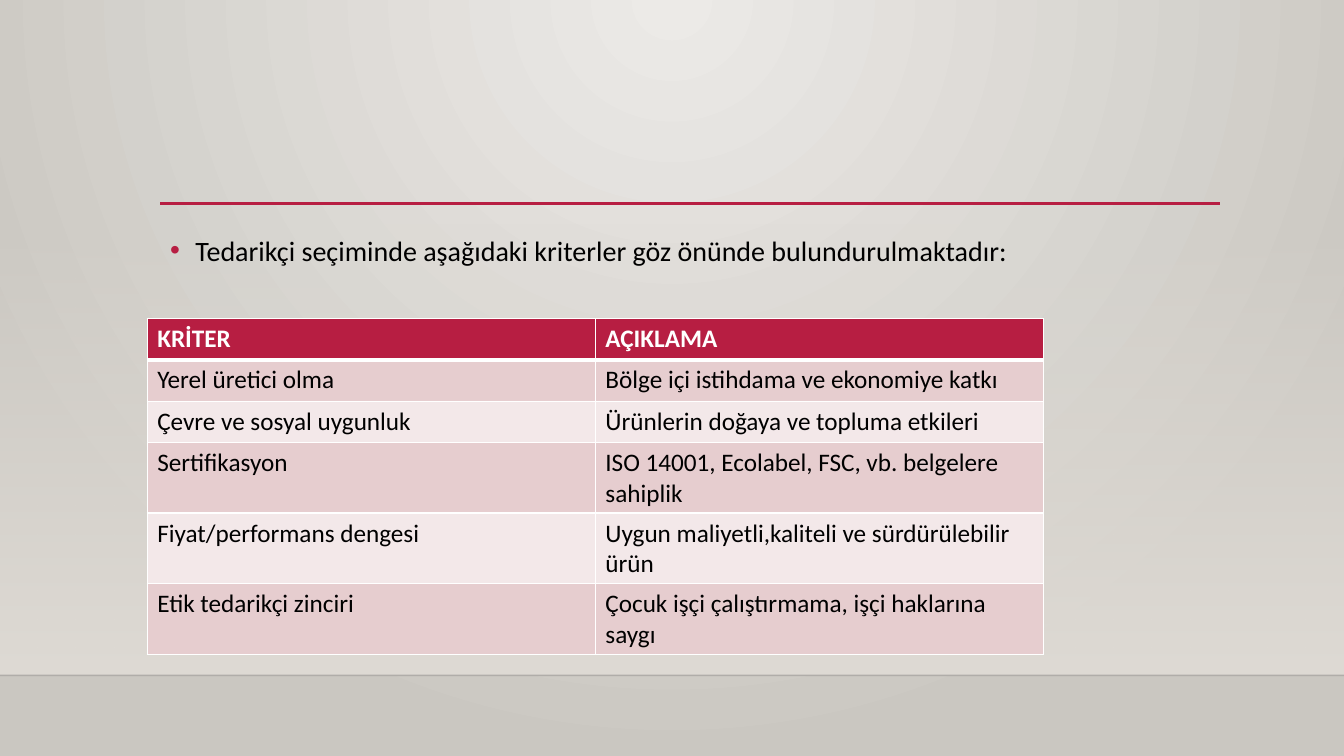
"""Build a slide that lists supplier selection criteria in a table."""
from lxml import etree
from pptx import Presentation
from pptx.dml.color import RGBColor
from pptx.enum.shapes import MSO_CONNECTOR, MSO_SHAPE
from pptx.oxml.ns import qn
from pptx.util import Inches, Pt

RECTANGLE = MSO_SHAPE.RECTANGLE
STRAIGHT = MSO_CONNECTOR.STRAIGHT
FONT = "Calibri"
COLORS = {
    "accent": "B71E42", "white": "FFFFFF", "black": "000000", "edge": "000001",
    "center": "ECEAE7", "rim": "CAC7C1", "haze": "DFDBD5",
    "odd": "E6CDCF", "even": "F3E8E9",
}
WIDTH, HEIGHT = 13.33, 7.5
LEFT, FLOOR = 1.59, 6.7
CRITERIA = [
    ("KRİTER", "AÇIKLAMA"),
    ("Yerel üretici olma", "Bölge içi istihdama ve ekonomiye katkı"),
    ("Çevre ve sosyal uygunluk", "Ürünlerin doğaya ve topluma etkileri"),
    ("Sertifikasyon", "ISO 14001, Ecolabel, FSC, vb. belgelere sahiplik"),
    ("Fiyat/performans dengesi", "Uygun maliyetli,kaliteli ve sürdürülebilir ürün"),
    ("Etik tedarikçi zinciri", "Çocuk işçi çalıştırmama, işçi haklarına saygı"),
]


def add_element(parent, tag, **attributes):
    """Append a DrawingML child and return it."""
    child = etree.SubElement(parent, qn(f"a:{tag}"))
    for name, value in attributes.items():
        child.set(name, str(value))
    return child


def add_text(para, text, size, color, bold=False):
    """Append one styled run to a paragraph."""
    span = para.add_run()
    span.text = text
    span.font.name = FONT
    span.font.size = Pt(size)
    span.font.bold = bold
    span.font.color.rgb = RGBColor.from_string(COLORS[color])


deck = Presentation()
deck.slide_width, deck.slide_height = Inches(WIDTH), Inches(HEIGHT)
page = deck.slides.add_slide(deck.slide_layouts[6])

backdrop = page.background.fill
haze = page.shapes.add_shape(
    RECTANGLE, 0, Inches(2.21), Inches(WIDTH), Inches(FLOOR - 2.21))
haze.shadow.inherit = False
haze.line.fill.background()
for fill, names in ((backdrop, ("center", "rim")), (haze.fill, ("haze", "haze"))):
    fill.gradient()
    for position, (stop, name) in enumerate(zip(fill.gradient_stops, names)):
        stop.position = position
        stop.color.rgb = RGBColor.from_string(COLORS[name])
haze.fill.gradient_angle = 270
add_element(haze.element.spPr.find(".//" + qn("a:srgbClr")), "alpha", val=0)

radial = page.element.find(".//" + qn("p:bgPr")).find(qn("a:gradFill"))
radial.remove(radial.find(qn("a:lin")))
circle = add_element(radial, "path", path="circle")
add_element(circle, "fillToRect", l=43000, t=0, r=43000, b=100000)

for start, end, level, color, weight, opacity in (
    (0, WIDTH, FLOOR, "edge", 1, 20),
    (LEFT, 12.1, 2.02, "accent", 2.5, 100),
):
    rule = page.shapes.add_connector(
        STRAIGHT, Inches(start), Inches(level), Inches(end), Inches(level))
    rule.line.width = Pt(weight)
    rule.line.color.rgb = RGBColor.from_string(COLORS[color])
    if opacity < 100:
        ink = rule.element.spPr.find(".//" + qn("a:srgbClr"))
        add_element(ink, "alpha", val=opacity * 1000)
    add_element(rule.element.spPr, "effectLst")

box = page.shapes.add_textbox(Inches(LEFT), Inches(2.2), Inches(10.5), Inches(0.7))
box.text_frame.word_wrap = True
para = box.text_frame.paragraphs[0]
para.line_spacing = 1.2
settings = para._p.get_or_add_pPr()
settings.set("marL", str(Inches(0.25)))
settings.set("indent", str(-Inches(0.25)))
add_element(add_element(settings, "buClr"), "srgbClr", val=COLORS["accent"])
add_element(settings, "buFont", typeface="Arial")
add_element(settings, "buChar", char="•")
add_text(para, "Tedarikçi seçiminde aşağıdaki kriterler göz önünde bulundurulmaktadır:",
         20, "black")

row_height = 0.41
table = page.shapes.add_table(
    len(CRITERIA), 2, Inches(1.46), Inches(3.16),
    Inches(8.89), Inches(row_height * len(CRITERIA))).table
for row, texts in enumerate(CRITERIA):
    header = row == 0
    shade = "accent" if header else "odd" if row % 2 else "even"
    for column, text in enumerate(texts):
        cell = table.cell(row, column)
        add_text(cell.text_frame.paragraphs[0], text, 18,
                 "white" if header else "black", header)
        borders = cell._tc.get_or_add_tcPr()
        for side in ("lnL", "lnR", "lnT", "lnB"):
            thick = (row, side) in ((0, "lnB"), (1, "lnT"))
            border = add_element(borders, side, w=Pt(3 if thick else 1))
            add_element(add_element(border, "solidFill"), "srgbClr", val=COLORS["white"])
        cell.fill.solid()
        cell.fill.fore_color.rgb = RGBColor.from_string(COLORS[shade])

deck.save("out.pptx")
